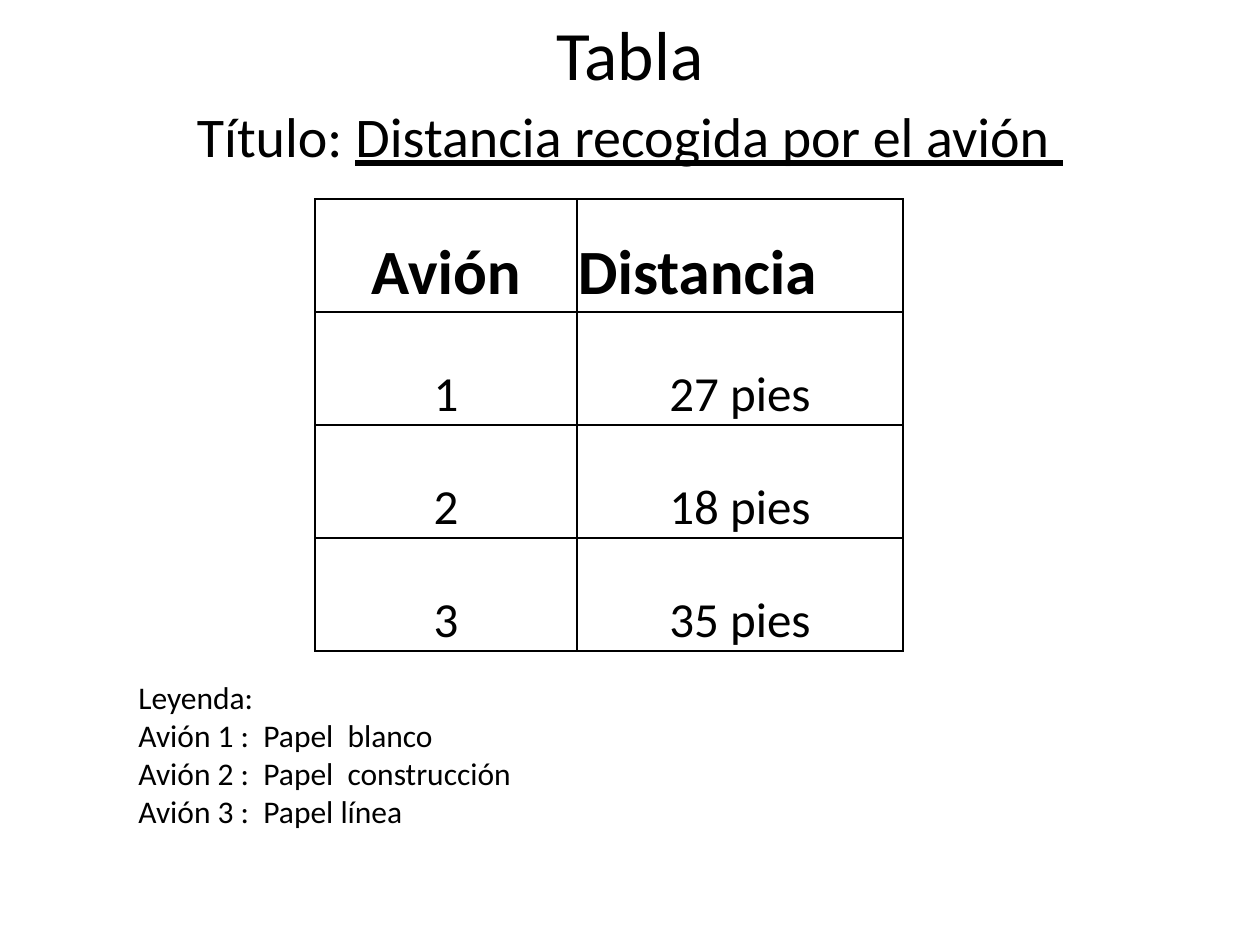
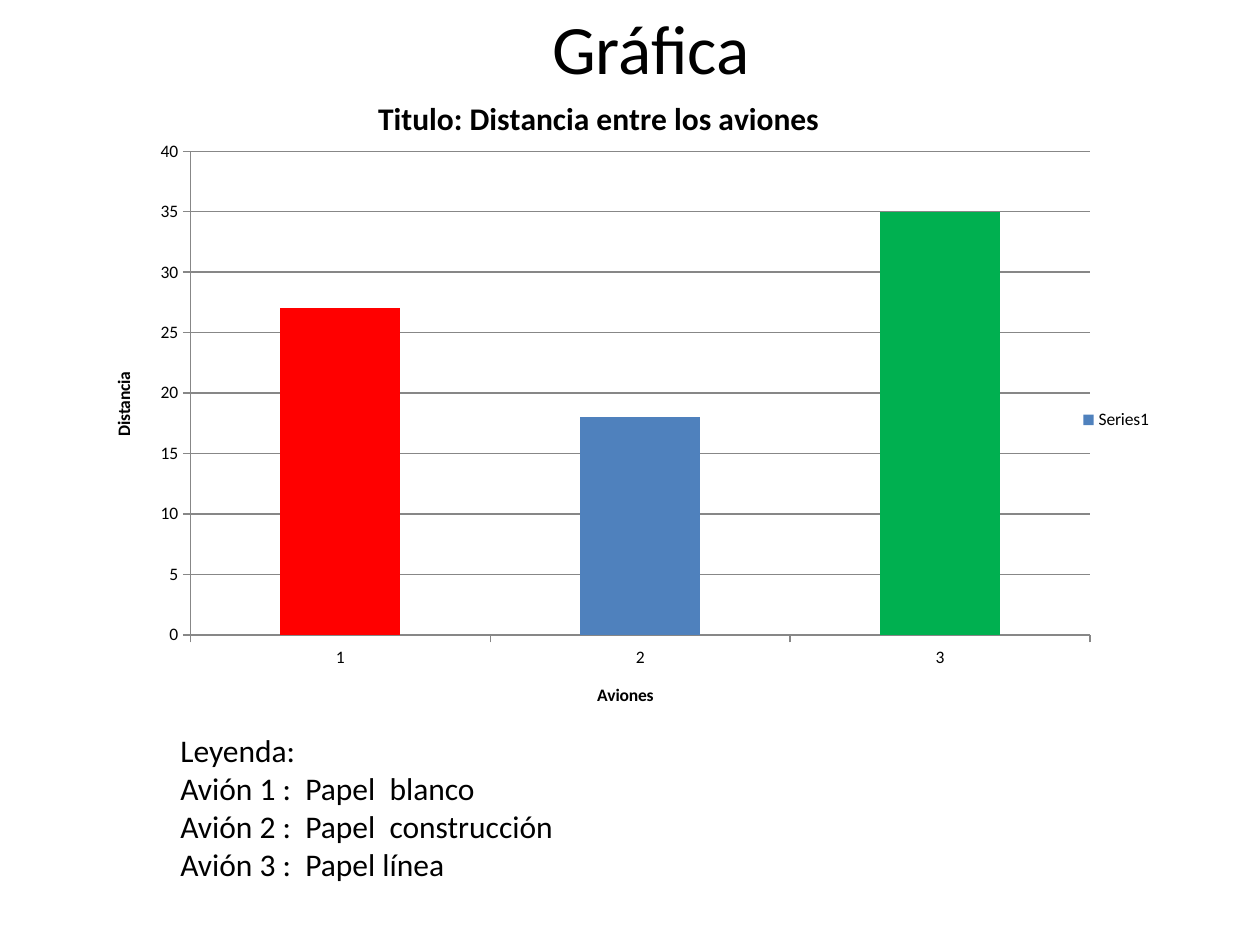
from lxml import etree
from pptx import Presentation
from pptx.chart.data import CategoryChartData
from pptx.dml.color import RGBColor
from pptx.enum.chart import XL_CHART_TYPE, XL_LEGEND_POSITION, XL_TICK_MARK
from pptx.enum.text import MSO_ANCHOR, PP_ALIGN
from pptx.oxml import parse_xml
from pptx.oxml.ns import nsdecls, qn
from pptx.util import Emu, Pt

LEFT, CENTER = PP_ALIGN.LEFT, PP_ALIGN.CENTER
TOP, MIDDLE, BOTTOM = MSO_ANCHOR.TOP, MSO_ANCHOR.MIDDLE, MSO_ANCHOR.BOTTOM
COLUMN = XL_CHART_TYPE.COLUMN_CLUSTERED
RIGHT = XL_LEGEND_POSITION.RIGHT
OUTSIDE = XL_TICK_MARK.OUTSIDE

BLACK = RGBColor(0x00, 0x00, 0x00)
WHITE = RGBColor(0xFF, 0xFF, 0xFF)
GRAY = RGBColor(0x87, 0x87, 0x87)
RED = RGBColor(0xFF, 0x00, 0x00)
BLUE = RGBColor(0x4F, 0x81, 0xBD)
GREEN = RGBColor(0x00, 0xB0, 0x50)
FONT = "Calibri"

TITLE_SIZE = 39.6
LEGEND_SIZE = 18
LEGEND = ["Leyenda:", "Avión 1 :  Papel  blanco",
          "Avión 2 :  Papel  construcción", "Avión 3 :  Papel línea"]
PLANES = ["1", "2", "3"]
FEET = [27, 18, 35]


def px(*sizes):
    """Turn pixels (126 to the inch) into EMU."""
    return [Emu(round(size * 914400 / 126)) for size in sizes]


def write(frame, lines, size, align=LEFT, anchor=TOP, bold=False):
    """Fill a text frame; each line is a string or a list of (text, underline)."""
    frame.word_wrap = True
    frame.vertical_anchor = anchor
    for i, line in enumerate(lines):
        para = frame.paragraphs[0] if i == 0 else frame.add_paragraph()
        para.alignment = align
        para.font.name, para.font.size = FONT, Pt(size)
        para.font.bold, para.font.color.rgb = bold, BLACK
        for text, under in [(line, None)] if isinstance(line, str) else line:
            run = para.add_run()
            run.text, run.font.underline = text, under


deck = Presentation()
deck.slide_width, deck.slide_height = px(1260, 945)
blank = deck.slide_layouts[6]

# Table slide
slide = deck.slides.add_slide(blank)
title = slide.shapes.add_textbox(*px(63, 0, 1134, 105))
write(title.text_frame, ["Tabla"], TITLE_SIZE, CENTER, MIDDLE)
heading = slide.shapes.add_textbox(*px(63, 95, 1134, 588))
write(heading.text_frame,
      [[("Título: ", None), ("Distancia recogida por el avión ", True)]],
      32, CENTER)

rows = [("Avión", "Distancia")]
rows += [(plane, f"{feet} pies") for plane, feet in zip(PLANES, FEET)]
table = slide.shapes.add_table(len(rows), 2, *px(315, 199, 588, 452)).table
for col, width in zip(table.columns, px(262, 326)):
    col.width = width
for r, row in enumerate(rows):
    table.rows[r].height = px(113)[0]
    for c, text in enumerate(row):
        cell = table.cell(r, c)
        head = r == 0
        write(cell.text_frame, [text], 36 if head else 28,
              LEFT if head and c == 1 else CENTER, bold=head)
        cell.vertical_anchor = BOTTOM
        cell.margin_left = cell.margin_right = cell.margin_top = px(1)[0]
        cell.margin_bottom = 0
        props = cell._tc.get_or_add_tcPr()
        for side in ("lnL", "lnR", "lnT", "lnB"):
            props.append(parse_xml(
                f'<a:{side} {nsdecls("a")} w="12700"><a:solidFill>'
                f'<a:srgbClr val="{BLACK}"/></a:solidFill></a:{side}>'))
        cell.fill.solid()
        cell.fill.fore_color.rgb = WHITE

note = slide.shapes.add_textbox(*px(126, 672, 1050, 165))
write(note.text_frame, LEGEND, LEGEND_SIZE)

# Chart slide
slide = deck.slides.add_slide(blank)
title = slide.shapes.add_textbox(*px(84, 0, 1134, 94))
write(title.text_frame, ["Gráfica"], TITLE_SIZE, CENTER, MIDDLE)

data = CategoryChartData()
data.categories = PLANES
data.add_series("Series1", FEET)
chart = slide.shapes.add_chart(COLUMN, *px(94, 84, 1071, 672), data).chart
chart.font.name, chart.font.size = FONT, Pt(10)
chart.font.color.rgb = BLACK
chart.has_title = True
write(chart.chart_title.text_frame, ["Titulo: Distancia entre los aviones"],
      18, CENTER, bold=True)
chart.has_legend = True
chart.legend.position = RIGHT
chart.legend.include_in_layout = False

for axis, name in ((chart.category_axis, "Aviones"),
                   (chart.value_axis, "Distancia")):
    axis.has_title = True
    write(axis.axis_title.text_frame, [name], 10, CENTER, bold=True)
    axis.major_tick_mark = OUTSIDE
    axis.format.line.color.rgb = GRAY
scale = chart.value_axis
scale.minimum_scale, scale.maximum_scale, scale.major_unit = 0, 40, 5
scale.has_major_gridlines = True
scale.major_gridlines.format.line.color.rgb = GRAY

plot = chart.plots[0]
plot.gap_width = 150
plot.vary_by_categories = False
bars = plot.series[0]
bars.format.fill.solid()
bars.format.fill.fore_color.rgb = BLUE
for i, color in ((0, RED), (2, GREEN)):
    fill = bars.points[i].format.fill
    fill.solid()
    fill.fore_color.rgb = color

# Fixed places of the plot and the chart title, as shares of the chart
area = chart._chartSpace.chart.plotArea
head = chart.chart_title._element
for owner, marks in (
        (area, dict(layoutTarget="inner", xMode="edge", yMode="edge",
                    x=0.09, y=0.1, w=0.84, h=0.72)),
        (head, dict(xMode="edge", yMode="edge", x=0.26, y=0.01))):
    for old in owner.findall(qn("c:layout")):
        owner.remove(old)
    layout = etree.Element(qn("c:layout"))
    manual = etree.SubElement(layout, qn("c:manualLayout"))
    for mark, value in marks.items():
        etree.SubElement(manual, qn(f"c:{mark}")).set("val", str(value))
    owner.insert(0 if owner is area else 1, layout)

note = slide.shapes.add_textbox(*px(168, 725, 630, 165))
write(note.text_frame, LEGEND, LEGEND_SIZE)

deck.save("out.pptx")
